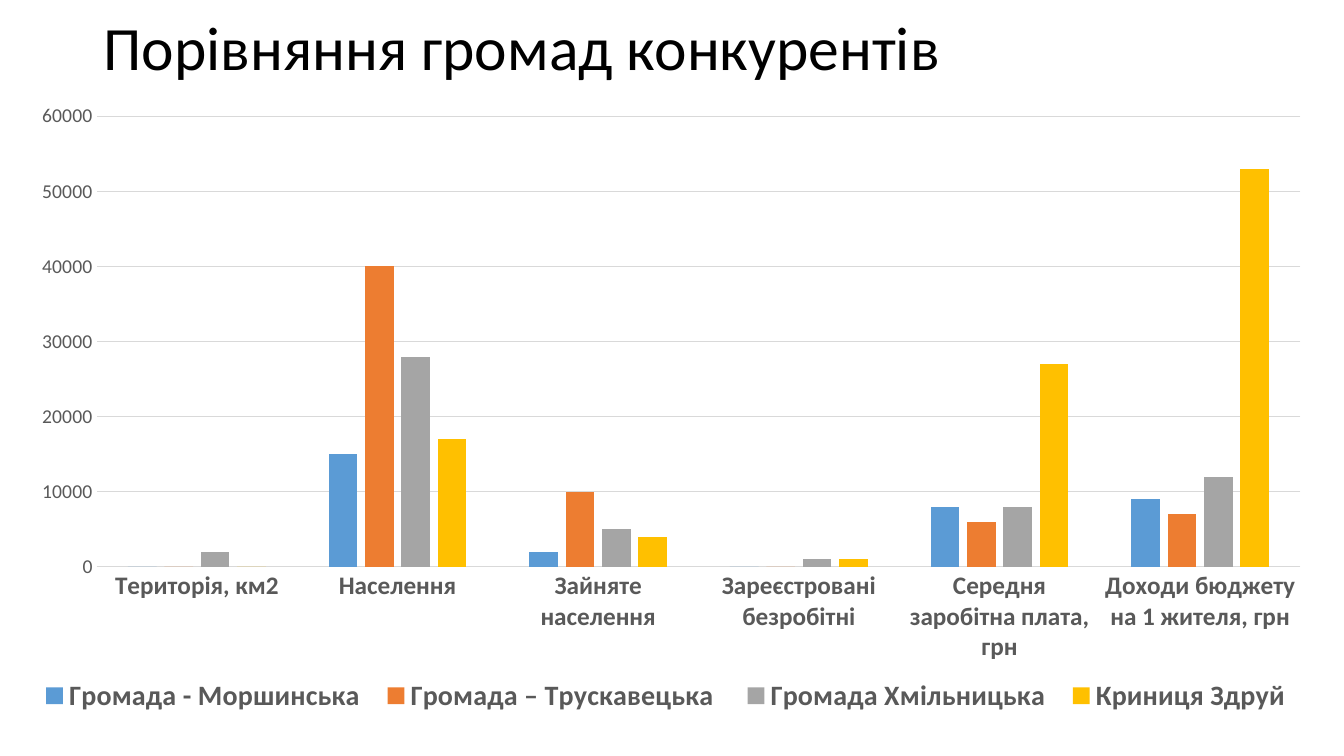
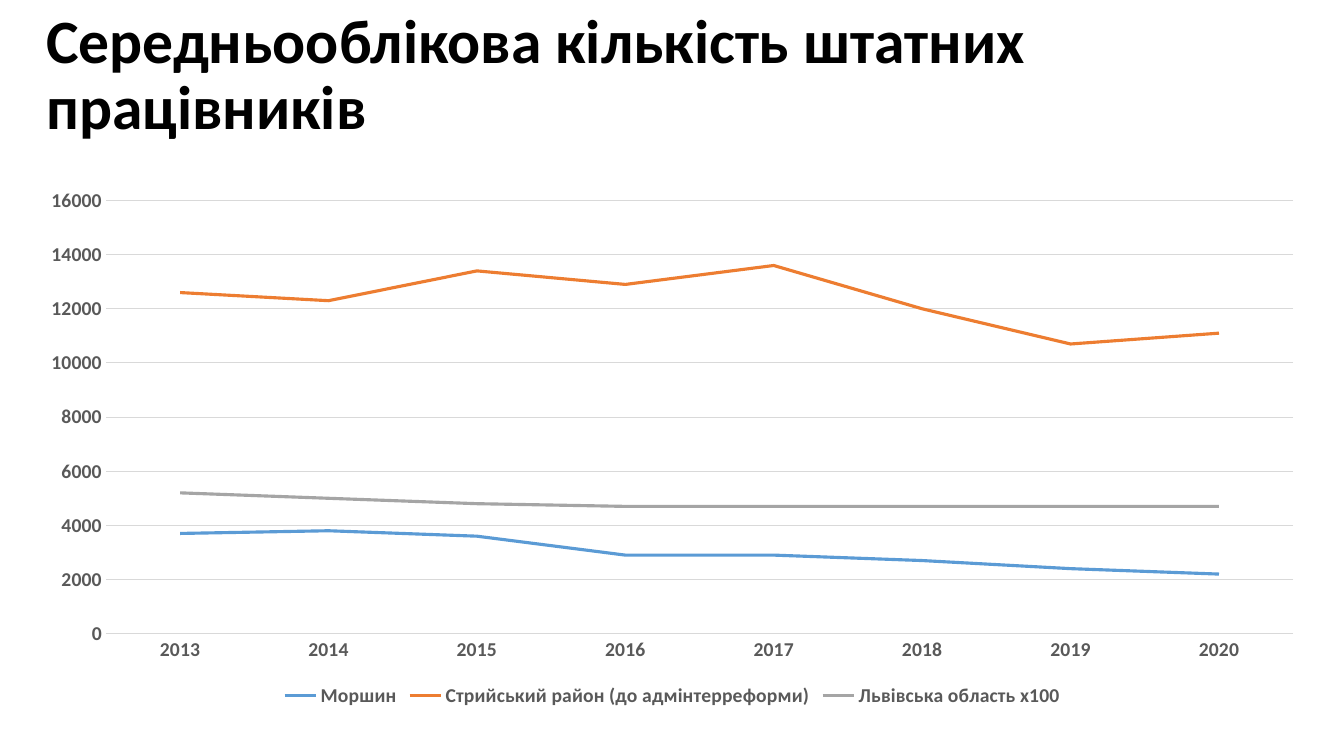
"""Build two chart slides comparing communities and staff numbers."""
from dataclasses import dataclass
from typing import Optional

from lxml import etree
from pptx import Presentation
from pptx import util as u
from pptx.chart import data as cd
from pptx.dml.color import RGBColor
from pptx.enum import chart as ch
from pptx.enum import text as t
from pptx.oxml import ns

FONT = "Calibri"
BLACK = RGBColor(0x00, 0x00, 0x00)
GREY = RGBColor(0x59, 0x59, 0x59)
RULE = RGBColor(0xD9, 0xD9, 0xD9)
PALETTE = (
    RGBColor(0x5B, 0x9B, 0xD5),
    RGBColor(0xED, 0x7D, 0x31),
    RGBColor(0xA5, 0xA5, 0xA5),
    RGBColor(0xFF, 0xC0, 0x00),
)
COLUMNS = ch.XL_CHART_TYPE.COLUMN_CLUSTERED
LINES = ch.XL_CHART_TYPE.LINE


@dataclass(frozen=True)
class Box:
    left: float
    top: float
    width: float
    height: float

    def lengths(self) -> tuple:
        return tuple(u.Pt(v) for v in (self.left, self.top, self.width, self.height))


@dataclass(frozen=True)
class Title:
    text: str
    box: Box
    bold: bool = False
    bottom_inset: float = 3.6


@dataclass(frozen=True)
class Plot:
    kind: ch.XL_CHART_TYPE
    box: Box
    categories: tuple
    series: dict
    axis_max: int
    axis_step: int
    category_size: float
    legend_size: float
    bold_values: bool = False
    inner_box: Optional[Box] = None
    legend_box: Optional[Box] = None


@dataclass(frozen=True)
class Page:
    title: Title
    plot: Plot


PAGES = (
    Page(
        Title("Порівняння громад конкурентів", Box(67, 6.5, 862, 59)),
        Plot(
            COLUMNS,
            Box(10.8, 65.5, 936, 455),
            ("Територія, км2", "Населення", "Зайняте населення",
             "Зареєстровані безробітні", "Середня заробітна плата, грн",
             "Доходи бюджету на 1 жителя, грн"),
            {
                "Громада - Моршинська": (0, 15000, 2000, 0, 8000, 9000),
                "Громада – Трускавецька ": (0, 40000, 10000, 0, 6000, 7000),
                "Громада Хмільницька": (2000, 28000, 5000, 1000, 8000, 12000),
                "Криниця Здруй": (0, 17000, 4000, 1000, 27000, 53000),
            },
            axis_max=60000, axis_step=10000, category_size=18, legend_size=20,
            inner_box=Box(69, 83, 860, 322), legend_box=Box(20, 484, 911, 26),
        ),
    ),
    Page(
        Title("Середньооблікова кількість штатних працівників",
              Box(26, 29, 906.5, 104.4), bold=True, bottom_inset=56.3),
        Plot(
            LINES,
            Box(18.2, 127, 924, 381.6),
            tuple(str(year) for year in range(2013, 2021)),
            {
                "Моршин": (3700, 3800, 3600, 2900, 2900, 2700, 2400, 2200),
                "Стрийський район (до адмінтерреформи)":
                    (12600, 12300, 13400, 12900, 13600, 12000, 10700, 11100),
                "Львівська область х100":
                    (5200, 5000, 4800, 4700, 4700, 4700, 4700, 4700),
            },
            axis_max=16000, axis_step=2000, category_size=14, legend_size=14,
            bold_values=True,
        ),
    ),
)


def style_font(font, *, size: float, color: RGBColor = GREY, bold: bool = False) -> None:
    font.name = FONT
    font.size = u.Pt(size)
    font.bold = bold
    font.color.rgb = color


def add_text(s, text: str, box: Box, *, size: float, color: RGBColor, bold: bool,
             bottom_inset: float, line_spacing: float = 0.9) -> None:
    tf = s.shapes.add_textbox(*box.lengths()).text_frame
    tf.word_wrap = True
    tf.vertical_anchor = t.MSO_ANCHOR.MIDDLE
    tf.margin_bottom = u.Pt(bottom_inset)
    p = tf.paragraphs[0]
    p.line_spacing = line_spacing
    r = p.add_run()
    r.text = text
    style_font(r.font, size=size, color=color, bold=bold)


def style_rule(line) -> None:
    line.color.rgb = RULE
    line.width = u.Pt(0.75)


def style_axes(chart, plot: Plot) -> None:
    cat, val = chart.category_axis, chart.value_axis
    for axis in (cat, val):
        axis.major_tick_mark = axis.minor_tick_mark = ch.XL_TICK_MARK.NONE
    style_font(cat.tick_labels.font, size=plot.category_size, bold=True)
    style_font(val.tick_labels.font, size=14, bold=plot.bold_values)
    style_rule(cat.format.line)
    val.format.line.fill.background()
    val.has_major_gridlines = True
    style_rule(val.major_gridlines.format.line)
    val.minimum_scale = 0
    val.maximum_scale = plot.axis_max
    val.major_unit = plot.axis_step


def style_series(chart, plot: Plot) -> None:
    group = chart.plots[0]
    group.vary_by_categories = False
    if plot.kind == COLUMNS:
        group.gap_width, group.overlap = 219, -27
    for series, color in zip(group.series, PALETTE):
        if plot.kind == COLUMNS:
            series.format.fill.solid()
            series.format.fill.fore_color.rgb = color
            series.invert_if_negative = False
        else:
            series.format.line.color.rgb = color
            series.format.line.width = u.Pt(2.25)
            series.marker.style = ch.XL_MARKER_STYLE.NONE
            series.smooth = False


def place_part(part, index: int, box: Box, frame: Box, *, inner: bool = False) -> None:
    for old in part.findall(ns.qn("c:layout")):
        part.remove(old)
    layout = etree.Element(ns.qn("c:layout"))
    manual = etree.SubElement(layout, ns.qn("c:manualLayout"))
    values = {"layoutTarget": "inner"} if inner else {}
    values |= {
        "xMode": "edge",
        "yMode": "edge",
        "x": (box.left - frame.left) / frame.width,
        "y": (box.top - frame.top) / frame.height,
        "w": box.width / frame.width,
        "h": box.height / frame.height,
    }
    for name, value in values.items():
        etree.SubElement(manual, ns.qn(f"c:{name}")).set("val", str(value))
    part.insert(index, layout)


def add_plot(s, plot: Plot) -> None:
    data = cd.CategoryChartData(number_format="General")
    data.categories = plot.categories
    for name, values in plot.series.items():
        data.add_series(name, values)
    chart = s.shapes.add_chart(plot.kind, *plot.box.lengths(), data).chart
    chart.has_title = False
    style_font(chart.font, size=10, color=BLACK)
    chart.has_legend = True
    chart.legend.position = ch.XL_LEGEND_POSITION.BOTTOM
    chart.legend.include_in_layout = False
    style_font(chart.legend.font, size=plot.legend_size, bold=True)
    style_axes(chart, plot)
    style_series(chart, plot)
    if plot.inner_box:
        area = chart.element.find(".//" + ns.qn("c:plotArea"))
        place_part(area, 0, plot.inner_box, plot.box, inner=True)
    if plot.legend_box:
        legend = chart.element.find(".//" + ns.qn("c:legend"))
        place_part(legend, 1, plot.legend_box, plot.box)


def main() -> None:
    prs = Presentation()
    prs.slide_width, prs.slide_height = u.Pt(960), u.Pt(540)
    for page in PAGES:
        s = prs.slides.add_slide(prs.slide_layouts[6])
        title = page.title
        add_text(s, title.text, title.box, size=44, color=BLACK, bold=title.bold,
                 bottom_inset=title.bottom_inset)
        add_plot(s, page.plot)
    prs.save("out.pptx")


if __name__ == "__main__":
    main()
